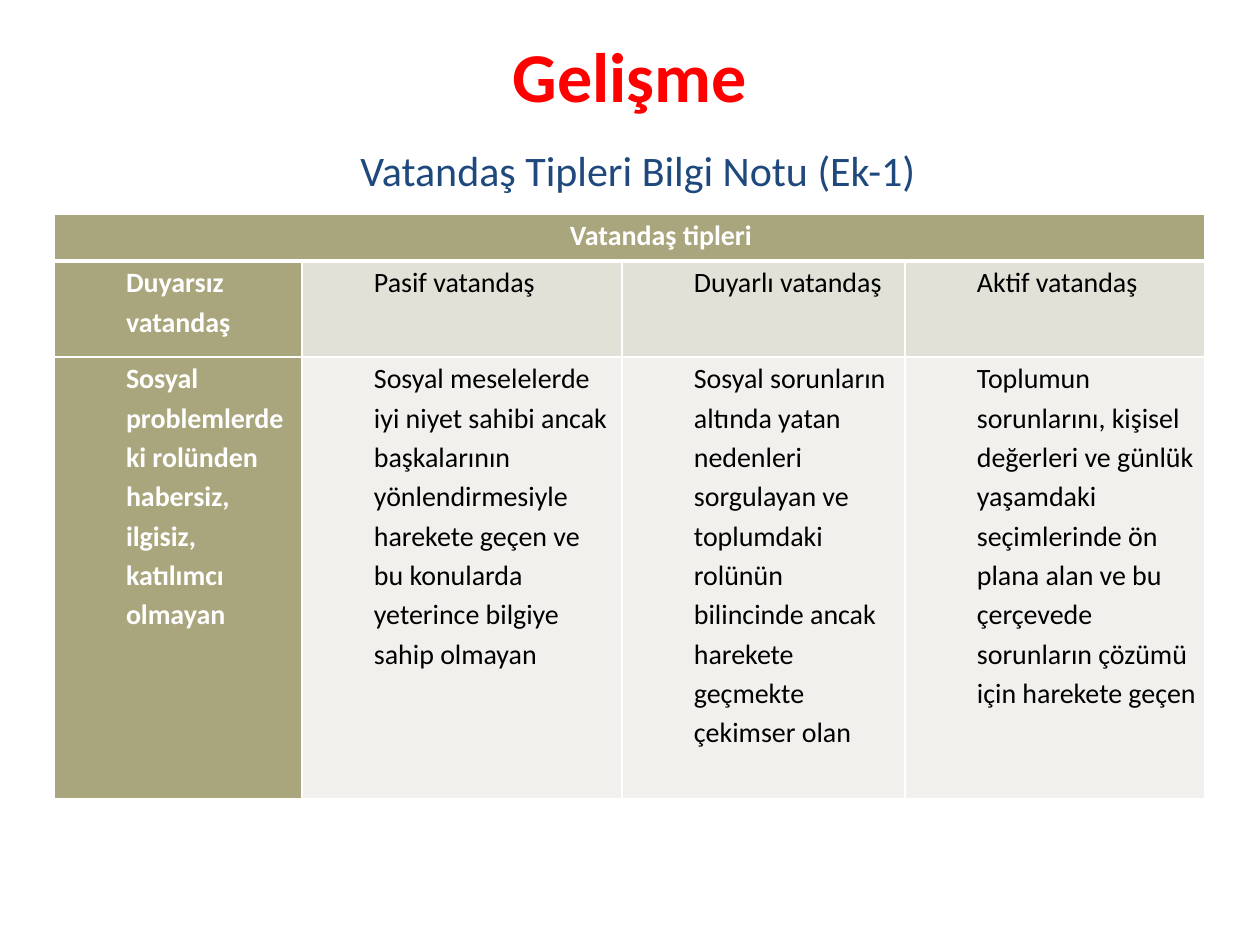
import pptx
import pptx.util
import pptx.dml.color
import pptx.enum.text
import pptx.oxml
import pptx.oxml.ns

ALIGN = pptx.enum.text.PP_ALIGN
ANCHOR = pptx.enum.text.MSO_ANCHOR
SCALE = 914400 / 126

RED, NAVY, WHITE, BLACK = "FF0000", "1F497D", "FFFFFF", "000000"
OLIVE, SAND, PALE = "A9A57C", "E2E1D7", "F1F0EC"

COLS = [248, 320, 283, 300]
ROWS = [47, 96, 442]
HEAD = "Vatandaş tipleri"
TYPES = ["Duyarsız vatandaş", "Pasif vatandaş", "Duyarlı vatandaş", "Aktif vatandaş"]
NOTES = [
    "Sosyal problemlerdeki rolünden habersiz, ilgisiz, katılımcı olmayan",
    "Sosyal meselelerde iyi niyet sahibi ancak başkalarının yönlendirmesiyle "
    "harekete geçen ve bu konularda yeterince bilgiye sahip olmayan",
    "Sosyal sorunların altında yatan nedenleri sorgulayan ve toplumdaki "
    "rolünün bilincinde ancak harekete geçmekte çekimser olan",
    "Toplumun sorunlarını, kişisel değerleri ve günlük yaşamdaki seçimlerinde "
    "ön plana alan ve bu çerçevede sorunların çözümü için harekete geçen",
]


def px(num):
    return pptx.util.Emu(round(num * SCALE))


def rgb(code):
    return pptx.dml.color.RGBColor.from_string(code)


def assign(item, values):
    for name, value in values.items():
        setattr(item, name, value)


class Page:
    font = "Calibri"

    def __init__(self, slide):
        self.slide = slide

    def run(self, para, text, size, color, bold=False):
        run = para.add_run()
        run.text = text
        assign(run.font, {"name": self.font, "size": pptx.util.Pt(size), "bold": bold})
        run.font.color.rgb = rgb(color)

    def title(self, x, y, w, h, lines):
        frame = self.slide.shapes.add_textbox(px(x), px(y), px(w), px(h)).text_frame
        assign(frame, {"word_wrap": True, "vertical_anchor": ANCHOR.MIDDLE})
        para = frame.paragraphs[0]
        para.alignment = ALIGN.CENTER
        for num, runs in enumerate(lines):
            if num:
                para.add_line_break()
            for args in runs:
                self.run(para, *args)

    def table(self, x, y, cols, rows):
        frame = self.slide.shapes.add_table(
            len(rows), len(cols), px(x), px(y), px(sum(cols)), px(sum(rows)))
        table = frame.table
        for col, width in zip(table.columns, cols):
            col.width = px(width)
        for row, height in zip(table.rows, rows):
            row.height = px(height)
        return table

    def cell(self, cell, text, fill, color, bold, align=ALIGN.LEFT):
        assign(cell, {"margin_left": px(9), "margin_right": px(9),
                      "margin_top": 0, "margin_bottom": 0})
        para = cell.text_frame.paragraphs[0]
        props = para._p.get_or_add_pPr()
        assign(para, {"alignment": align, "line_spacing": 1.15})
        props.set("marL", str(px(63)))
        props.set("indent", "0")
        props.append(pptx.oxml.parse_xml(
            f'<a:tabLst {pptx.oxml.ns.nsdecls("a")}>'
            f'<a:tab pos="{px(25)}" algn="l"/></a:tabLst>'))
        if text:
            self.run(para, text, 16, color, bold)
        cell.fill.solid()
        cell.fill.fore_color.rgb = rgb(fill)

    def border(self, cell, top=1, bottom=1):
        props = cell._tc.get_or_add_tcPr()
        sides = {"L": 1, "R": 1, "T": top, "B": bottom}
        for num, (side, width) in enumerate(sides.items()):
            props.insert(num, pptx.oxml.parse_xml(
                f'<a:ln{side} {pptx.oxml.ns.nsdecls("a")} w="{pptx.util.Pt(width)}">'
                f'<a:solidFill><a:srgbClr val="{WHITE}"/></a:solidFill></a:ln{side}>'))


def main():
    deck = pptx.Presentation()
    assign(deck, {"slide_width": px(1260), "slide_height": px(945)})
    page = Page(deck.slides.add_slide(deck.slide_layouts[6]))

    # Title and subtitle
    page.title(63, 38, 1134, 157, [
        [("Gelişme", 40, RED, True)],
        [(" ", 40, RED, True), ("Vatandaş Tipleri Bilgi Notu (Ek-1)", 24, NAVY)],
    ])

    # Table header across all columns
    table = page.table(54, 214, COLS, ROWS)
    table.cell(0, 0).merge(table.cell(0, len(COLS) - 1))
    for col in range(len(COLS)):
        cell = table.cell(0, col)
        page.cell(cell, "" if col else HEAD, OLIVE, WHITE, True, ALIGN.CENTER)
        page.border(cell, bottom=3)

    # Citizen types and their descriptions
    for row, (texts, shade) in enumerate([(TYPES, SAND), (NOTES, PALE)], 1):
        for col, text in enumerate(texts):
            cell = table.cell(row, col)
            look = (shade, BLACK, False) if col else (OLIVE, WHITE, True)
            page.cell(cell, text, *look)
            page.border(cell, top=3 if row == 1 else 1)

    deck.save("out.pptx")


if __name__ == "__main__":
    main()
